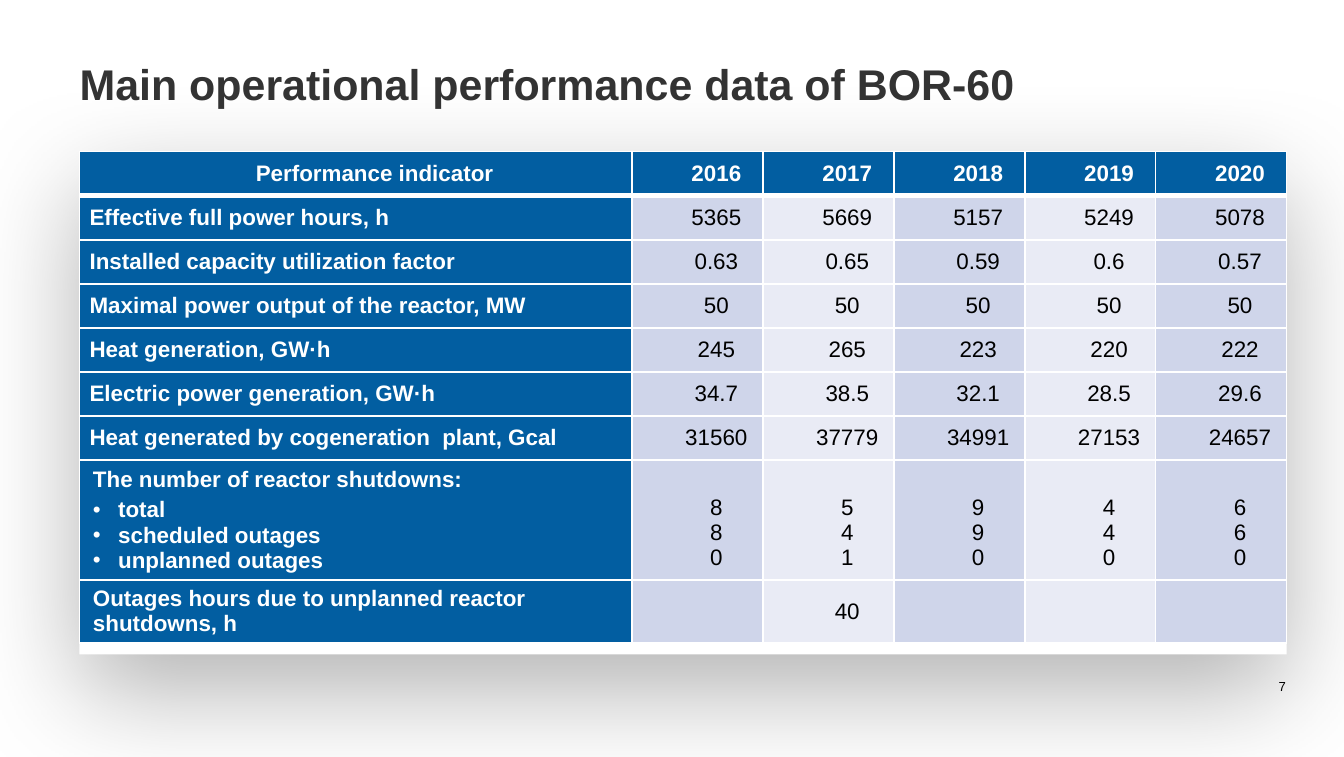
from lxml.etree import SubElement
from pptx import Presentation
from pptx.dml.color import RGBColor
from pptx.enum.shapes import MSO_SHAPE as Shape
from pptx.enum.text import MSO_ANCHOR as Anchor, PP_ALIGN as Align
from pptx.oxml.ns import qn
from pptx.util import Pt

# Content
TITLE = "Main operational performance data of BOR-60"
PAGE_NUMBER = "7"
HEADER = ["Performance indicator", "2016", "2017", "2018", "2019", "2020"]
INDICATORS = [
    ["Effective full power hours, h", "5365", "5669", "5157", "5249", "5078"],
    ["Installed capacity utilization factor", "0.63", "0.65", "0.59", "0.6", "0.57"],
    ["Maximal power output of the reactor, MW", "50", "50", "50", "50", "50"],
    ["Heat generation, GW·h", "245", "265", "223", "220", "222"],
    ["Electric power generation, GW·h", "34.7", "38.5", "32.1", "28.5", "29.6"],
    ["Heat generated by cogeneration  plant, Gcal",
     "31560", "37779", "34991", "27153", "24657"],
]
SHUTDOWNS = ["The number of reactor shutdowns:\ntotal\nscheduled outages\nunplanned outages",
             "8\n8\n0", "5\n4\n1", "9\n9\n0", "4\n4\n0", "6\n6\n0"]
OUTAGE_HOURS = ["Outages hours due to unplanned reactor shutdowns, h", "", "40", "", "", ""]
ROWS = [HEADER, *INDICATORS, SHUTDOWNS, OUTAGE_HOURS]

# Layout in points
LEFT, TOP, WIDTH, HEIGHT = 42.6, 81.2, 646.7, 269.2
LABEL_WIDTH, YEAR_WIDTH = 296, 70.14
ROW_HEIGHTS = [23.6] * (1 + len(INDICATORS)) + [64.2, 33.8]
YEAR_INDENT, BULLET_INDENT = 20.2, 13.5
BLUE, WHITE, BLACK, GREY = "025EA1", "FFFFFF", "000000", "333333"
BANDS = ["E9EBF5", "CFD5EA"]


def color(value):
    return RGBColor.from_string(value)


def write(frame, text, size=12, ink=BLACK, bold=False, align=Align.LEFT,
          indent=0, bullets=False, spacing=None):
    """Write one paragraph per line; with bullets, the first line is a heading."""
    for index, line in enumerate(text.split("\n")):
        para = frame.paragraphs[0] if index == 0 else frame.add_paragraph()
        props = para._p.get_or_add_pPr()
        if bullets and index:
            props.set("marL", str(Pt(BULLET_INDENT)))
            props.set("indent", str(-Pt(BULLET_INDENT)))
            SubElement(props, qn("a:buFont"), typeface="Arial")
            SubElement(props, qn("a:buChar"), char="•")
        elif bullets:
            para.space_after = Pt(3)
        if indent:
            props.set("marL", "0")
            props.set("indent", str(Pt(indent)))
        para.alignment = align
        para.line_spacing = spacing
        span = para.add_run()
        span.text = line
        span.font.name, span.font.size, span.font.bold = "Arial", Pt(size), bold
        span.font.color.rgb = color(ink)


def add_text(page, left, top, width, height, text, anchor=Anchor.TOP, **style):
    box = page.shapes.add_textbox(Pt(left), Pt(top), Pt(width), Pt(height))
    frame = box.text_frame
    frame.word_wrap = True
    frame.vertical_anchor = anchor
    frame.margin_left = frame.margin_top = frame.margin_right = frame.margin_bottom = 0
    write(frame, text, **style)


def set_margins(cell, side, top, bottom):
    cell.margin_left = cell.margin_right = Pt(side)
    cell.margin_top, cell.margin_bottom = Pt(top), Pt(bottom)


def add_borders(cell, top, bottom):
    props = cell._tc.get_or_add_tcPr()
    for edge, width in (("L", 1), ("R", 1), ("T", top), ("B", bottom)):
        line = SubElement(props, qn("a:ln" + edge), w=str(Pt(width)))
        SubElement(SubElement(line, qn("a:solidFill")), qn("a:srgbClr"), val=WHITE)


def add_panel(page):
    panel = page.shapes.add_shape(Shape.RECTANGLE, Pt(LEFT), Pt(TOP), Pt(WIDTH), Pt(HEIGHT))
    panel.fill.solid()
    panel.fill.fore_color.rgb = color(WHITE)
    panel.line.fill.background()
    panel.shadow.inherit = False
    effects = panel._element.spPr.find(qn("a:effectLst"))
    shadow = SubElement(effects, qn("a:outerShdw"), blurRad=str(Pt(60)), dist=str(Pt(20)),
                        dir="5400000", algn="t", rotWithShape="0")
    shade = SubElement(shadow, qn("a:srgbClr"), val=BLACK)
    SubElement(shade, qn("a:alpha"), val="30000")


def add_data_table(page):
    table = page.shapes.add_table(len(ROWS), len(HEADER), Pt(LEFT), Pt(TOP), Pt(WIDTH),
                                  Pt(sum(ROW_HEIGHTS))).table
    for index, column in enumerate(table.columns):
        column.width = Pt(YEAR_WIDTH if index else LABEL_WIDTH)
    for r, (values, height) in enumerate(zip(ROWS, ROW_HEIGHTS)):
        table.rows[r].height = Pt(height)
        for c, text in enumerate(values):
            cell = table.cell(r, c)
            dark = r == 0 or c == 0
            add_borders(cell, top=3 if r == 1 else 1, bottom=3 if r == 0 else 1)
            cell.fill.solid()
            cell.fill.fore_color.rgb = color(BLUE if dark else BANDS[c % 2])
            cell.vertical_anchor = Anchor.MIDDLE
            style = dict(ink=WHITE if dark else BLACK, bold=dark)
            if r and c == 0:
                single = values in INDICATORS
                # Tight top and bottom margins keep the tall rows at their set height
                set_margins(cell, *((5.4, 0, 0) if single else (7.2, 1.5, 1.5)))
                style.update(align=Align.JUSTIFY if single else Align.LEFT,
                             bullets=values is SHUTDOWNS)
            else:
                # Counts sit one line lower, beside the bulleted labels
                set_margins(cell, 0, 13.8 if values is SHUTDOWNS else 0, 0)
                style.update(align=Align.CENTER, indent=YEAR_INDENT)
            if text:
                write(cell.text_frame, text, **style)
            else:
                cell.text_frame.paragraphs[0].font.size = Pt(12)


deck = Presentation()
deck.slide_width, deck.slide_height = Pt(720), Pt(405.4)
page = deck.slides.add_slide(deck.slide_layouts[6])
page.background.fill.solid()
page.background.fill.fore_color.rgb = color(WHITE)

# Page number, shadowed panel, title and table
add_text(page, 644.6, 360.7, 44.2, 10.8, PAGE_NUMBER, size=7, align=Align.RIGHT,
         anchor=Anchor.BOTTOM)
add_panel(page)
add_text(page, LEFT, 33.8, 517, 26, TITLE, size=23, ink=GREY, bold=True, spacing=0.9)
add_data_table(page)

deck.save("out.pptx")
